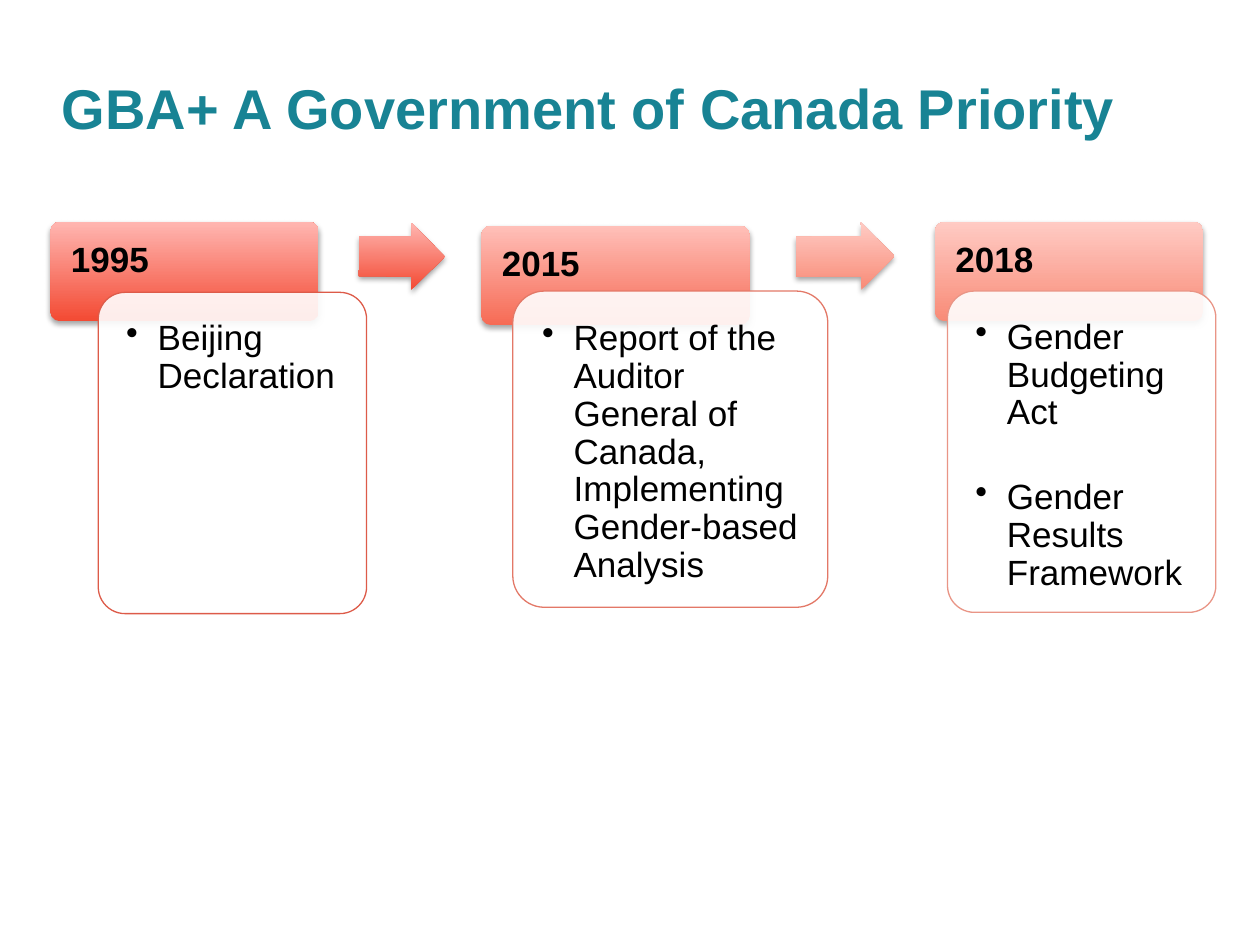
from dataclasses import dataclass

from lxml.etree import SubElement
from pptx import Presentation
from pptx.dml.color import RGBColor
from pptx.enum.shapes import MSO_SHAPE
from pptx.enum.text import MSO_ANCHOR, PP_ALIGN
from pptx.oxml.ns import qn
from pptx.util import Inches, Pt


@dataclass(frozen=True)
class Theme:
    font: str = "Arial"
    title: str = "188394"
    text: str = "000000"
    card: str = "FFFFFF"
    head_size: int = 32
    body_size: int = 20
    # dark end, light end, card outline
    red: tuple = ("F34A33", "FFB6B1", "DD5B49")
    coral: tuple = ("F66B55", "FFC0B9", "E37867")
    pink: tuple = ("F88B77", "FFCBC4", "E99586")


THEME = Theme()

# year, tones, tab place, card box, bullets
STAGES = [
    ("1995", THEME.red, (0.4, 1.76), (0.78, 2.32, 2.13, 2.55),
     ["Beijing Declaration"]),
    ("2015", THEME.coral, (3.82, 1.79), (4.07, 2.31, 2.5, 2.51),
     ["Report of the Auditor General of Canada, Implementing "
      "Gender‑based Analysis"]),
    ("2018", THEME.pink, (7.42, 1.76), (7.52, 2.31, 2.13, 2.55),
     ["Gender Budgeting Act", "Gender Results Framework"]),
]
# box, turn, tones
ARROWS = [
    ((2.85, 1.77, 0.68, 0.53), 0.4, THEME.red),
    ((6.32, 1.77, 0.78, 0.53), -0.3, THEME.pink),
]
TAB = (2.13, 0.79)
GAP = 27


def rgb(code):
    return RGBColor.from_string(code)


def style(para, size, color, bold=False):
    font = para.font
    font.name, font.size, font.bold = THEME.font, Pt(size), bold
    font.color.rgb = rgb(color)


def add_box(slide, kind, box, *adjust):
    shape = slide.shapes.add_shape(kind, *map(Inches, box))
    for i, value in enumerate(adjust):
        shape.adjustments[i] = value
    shape.shadow.inherit = False
    return shape


def shade(shape, tones):
    """Fill from dark at the foot to light at the top, with a soft shadow."""
    shape.fill.gradient()
    shape.fill.gradient_angle = 90
    for stop, tone in zip(shape.fill.gradient_stops, tones):
        stop.color.rgb = rgb(tone)
    shape.line.fill.background()
    effects = shape._element.spPr.find(qn("a:effectLst"))
    shadow = SubElement(effects, qn("a:outerShdw"), blurRad=str(Pt(3.1)),
                        dist=str(Pt(1.8)), dir="5400000", rotWithShape="0")
    color = SubElement(shadow, qn("a:srgbClr"), val="000000")
    SubElement(color, qn("a:alpha"), val="35000")


def set_frame(shape, side, top):
    frame = shape.text_frame
    frame.word_wrap = True
    frame.vertical_anchor = MSO_ANCHOR.TOP
    frame.margin_left = frame.margin_right = Inches(side)
    frame.margin_top = frame.margin_bottom = Inches(top)
    return frame


def add_line(frame, text, first, bullet=False):
    para = frame.paragraphs[0] if first else frame.add_paragraph()
    para.text = text
    para.alignment = PP_ALIGN.LEFT
    para.line_spacing = 0.9
    if bullet:
        props = para._p.get_or_add_pPr()
        props.set("marL", str(Inches(0.25)))
        props.set("indent", str(Inches(-0.25)))
        SubElement(props, qn("a:buChar"), char="•")
    if not first:
        para.space_before = Pt(GAP)
    style(para, THEME.body_size, THEME.text, bold=not bullet)


def add_tab(slide, place, year, tones):
    tab = add_box(slide, MSO_SHAPE.ROUNDED_RECTANGLE, place + TAB, 0.1)
    shade(tab, tones)
    add_line(set_frame(tab, 0.14, 0.14), year, True)


def add_card(slide, box, items, edge):
    card = add_box(slide, MSO_SHAPE.ROUNDED_RECTANGLE, box, 0.1)
    card.fill.solid()
    card.fill.fore_color.rgb = rgb(THEME.card)
    color = card._element.spPr.find(qn("a:solidFill"))[0]
    SubElement(color, qn("a:alpha"), val="90000")
    card.line.color.rgb = rgb(edge)
    card.line.width = Pt(0.75)
    frame = set_frame(card, 0.16, 0.16)
    for i, item in enumerate(items):
        add_line(frame, item, i == 0, bullet=True)


def add_arrow(slide, box, turn, tones):
    arrow = add_box(slide, MSO_SHAPE.RIGHT_ARROW, box, 0.6, 0.5)
    arrow.rotation = turn
    shade(arrow, tones)


def set_title(slide, box, text):
    title = slide.shapes.title
    title.left, title.top, title.width, title.height = map(Inches, box)
    title.text_frame.vertical_anchor = MSO_ANCHOR.MIDDLE
    para = title.text_frame.paragraphs[0]
    para.text = text
    para.alignment = PP_ALIGN.LEFT
    style(para, THEME.head_size, THEME.title, bold=True)


def main():
    deck = Presentation()
    deck.slide_width, deck.slide_height = Inches(10), Inches(7.5)
    slide = deck.slides.add_slide(deck.slide_layouts[5])
    set_title(slide, (0.39, 0.33, 9, 1.04),
              "GBA+ A Government of Canada Priority")
    for year, tones, place, box, items in STAGES:
        add_tab(slide, place, year, tones[:2])
        add_card(slide, box, items, tones[2])
    for box, turn, tones in ARROWS:
        add_arrow(slide, box, turn, tones[:2])
    deck.save("out.pptx")


if __name__ == "__main__":
    main()
